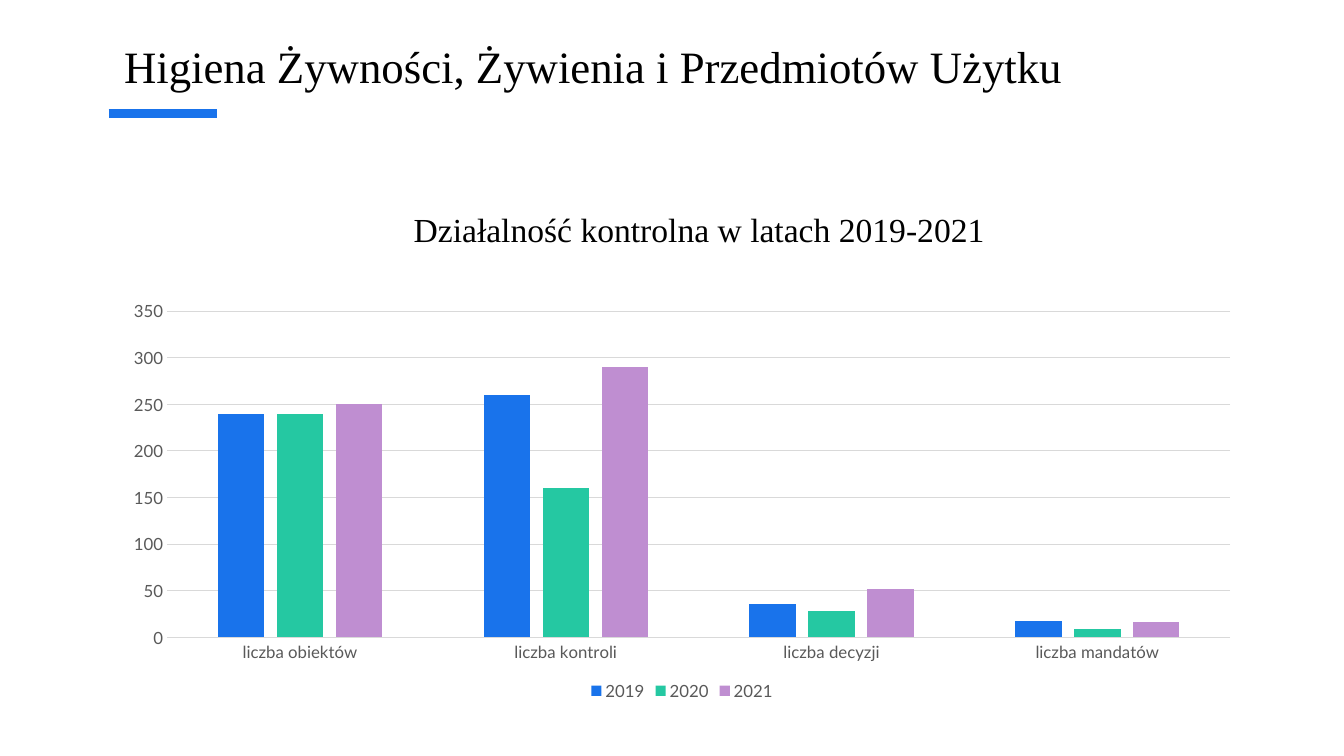
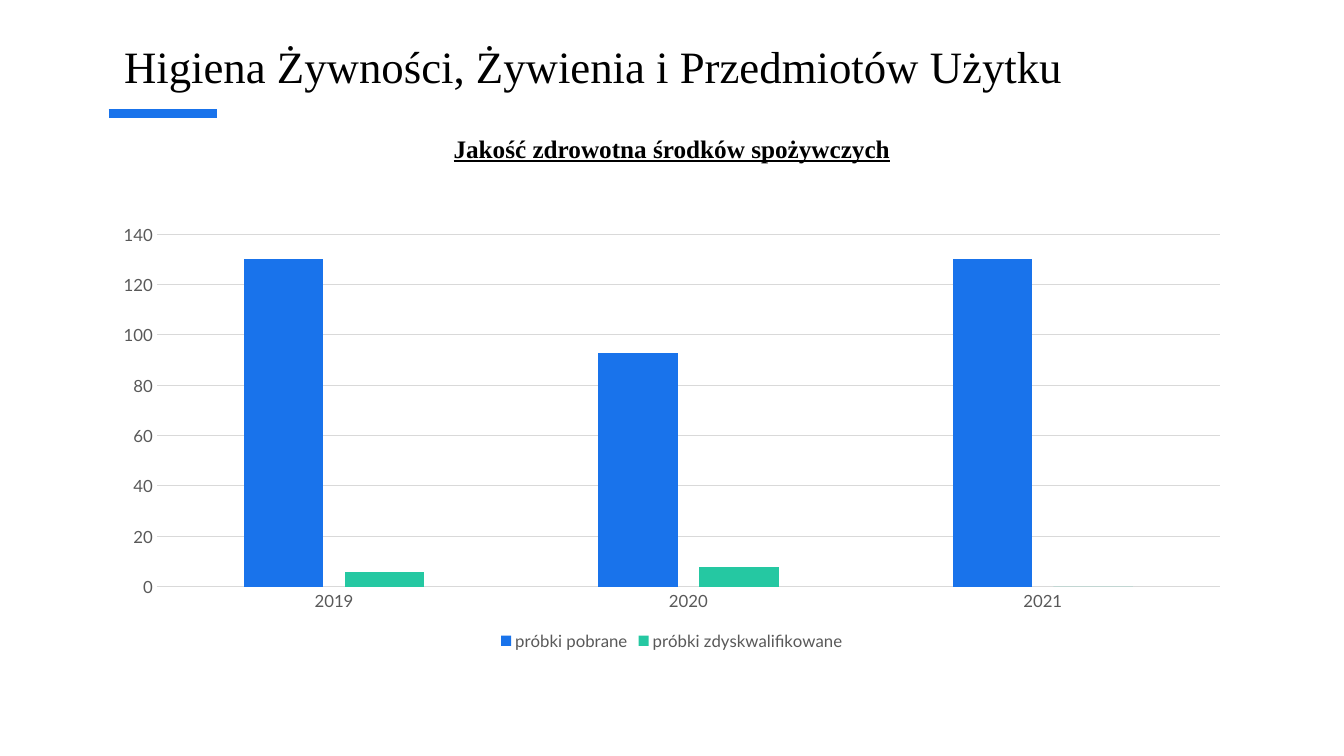
from lxml import etree
from pptx import Presentation
from pptx.chart.data import CategoryChartData
from pptx.dml.color import RGBColor
from pptx.enum.chart import XL_CHART_TYPE, XL_LEGEND_POSITION, XL_TICK_MARK
from pptx.enum.shapes import MSO_CONNECTOR
from pptx.enum.text import MSO_ANCHOR, PP_ALIGN
from pptx.oxml.ns import qn
from pptx.util import Cm, Pt

BLUE = RGBColor(0x19, 0x73, 0xEB)
GREEN = RGBColor(0x25, 0xC8, 0xA2)
VIOLET = RGBColor(0xBF, 0x8E, 0xD1)
BLACK = RGBColor(0x00, 0x00, 0x00)
GREY = RGBColor(0x59, 0x59, 0x59)
LIGHT_GREY = RGBColor(0xD9, 0xD9, 0xD9)
SERIES_COLORS = (BLUE, GREEN, VIOLET)

COLUMNS = XL_CHART_TYPE.COLUMN_CLUSTERED
BOTTOM = XL_LEGEND_POSITION.BOTTOM
NO_TICK = XL_TICK_MARK.NONE
STRAIGHT = MSO_CONNECTOR.STRAIGHT
CENTER = PP_ALIGN.CENTER
TOP = MSO_ANCHOR.TOP

TEXT_FONT = "Times New Roman"
CHART_FONT = "Lato"
CONTENT_WIDTH = Cm(28.78)
TITLE = "Higiena Żywności, Żywienia i Przedmiotów Użytku"


def add_heading(page, text, left, top, height, size, emphasis=False):
    box = page.shapes.add_textbox(left, top, CONTENT_WIDTH, height)
    frame = box.text_frame
    frame.word_wrap = True
    frame.vertical_anchor = TOP
    para = frame.paragraphs[0]
    para.alignment = CENTER
    font = para.font
    font.name = TEXT_FONT
    font.size = Pt(size)
    font.color.rgb = BLACK
    span = para.add_run()
    span.text = text
    if emphasis:
        span.font.bold = True
        span.font.underline = True


def add_accent(page):
    accent = page.shapes.add_connector(
        STRAIGHT, Cm(2.74), Cm(2.86), Cm(5.46), Cm(2.86))
    accent.line.color.rgb = BLUE
    accent.line.width = Pt(6)
    etree.SubElement(accent._element.spPr, qn("a:effectLst"))


def add_page(deck):
    page = deck.slides.add_slide(deck.slide_layouts[6])
    add_accent(page)
    add_heading(page, TITLE, Cm(0.57), Cm(0.84), Cm(2.46), 32)
    return page


def style_line(line):
    line.color.rgb = LIGHT_GREY
    line.width = Pt(0.75)


def add_column_chart(page, left, top, height, categories, series, step, maximum):
    data = CategoryChartData()
    data.categories = categories
    for name, values in series:
        data.add_series(name, values)
    chart = page.shapes.add_chart(
        COLUMNS, left, top, CONTENT_WIDTH, height, data).chart

    chart.has_title = False
    chart.font.name = CHART_FONT
    chart.font.size = Pt(12)
    chart.font.color.rgb = GREY
    chart.has_legend = True
    chart.legend.position = BOTTOM
    chart.legend.include_in_layout = False

    plot = chart.plots[0]
    plot.vary_by_categories = False
    plot.gap_width = 219
    plot.overlap = -27
    for bars, color in zip(plot.series, SERIES_COLORS):
        bars.format.fill.solid()
        bars.format.fill.fore_color.rgb = color

    chart.category_axis.major_tick_mark = NO_TICK
    style_line(chart.category_axis.format.line)

    value_axis = chart.value_axis
    value_axis.major_tick_mark = NO_TICK
    value_axis.minimum_scale = 0
    value_axis.maximum_scale = maximum
    value_axis.major_unit = step
    value_axis.format.line.fill.background()
    style_line(value_axis.major_gridlines.format.line)


def add_inspections_page(deck):
    page = add_page(deck)
    add_heading(page, "Działalność kontrolna w latach 2019-2021",
                Cm(3.23), Cm(5.13), Cm(2.46), 24)
    add_column_chart(
        page, Cm(2.8), Cm(7.38), Cm(10.38),
        ("liczba obiektów", "liczba kontroli",
         "liczba decyzji", "liczba mandatów"),
        (("2019", (240, 260, 36, 17)),
         ("2020", (240, 160, 28, 9)),
         ("2021", (250, 290, 52, 16))),
        step=50, maximum=350)


def add_samples_page(deck):
    page = add_page(deck)
    add_heading(page, "Jakość zdrowotna środków spożywczych",
                Cm(2.54), Cm(3.23), Cm(1.9), 18, emphasis=True)
    add_column_chart(
        page, Cm(2.54), Cm(5.43), Cm(11.07),
        ("2019", "2020", "2021"),
        (("próbki pobrane", (130, 93, 130)),
         ("próbki zdyskwalifikowane", (6, 8, 0))),
        step=20, maximum=140)


def main():
    deck = Presentation()
    deck.slide_width = Cm(33.87)
    deck.slide_height = Cm(19.05)
    add_inspections_page(deck)
    add_samples_page(deck)
    deck.save("out.pptx")


if __name__ == "__main__":
    main()
